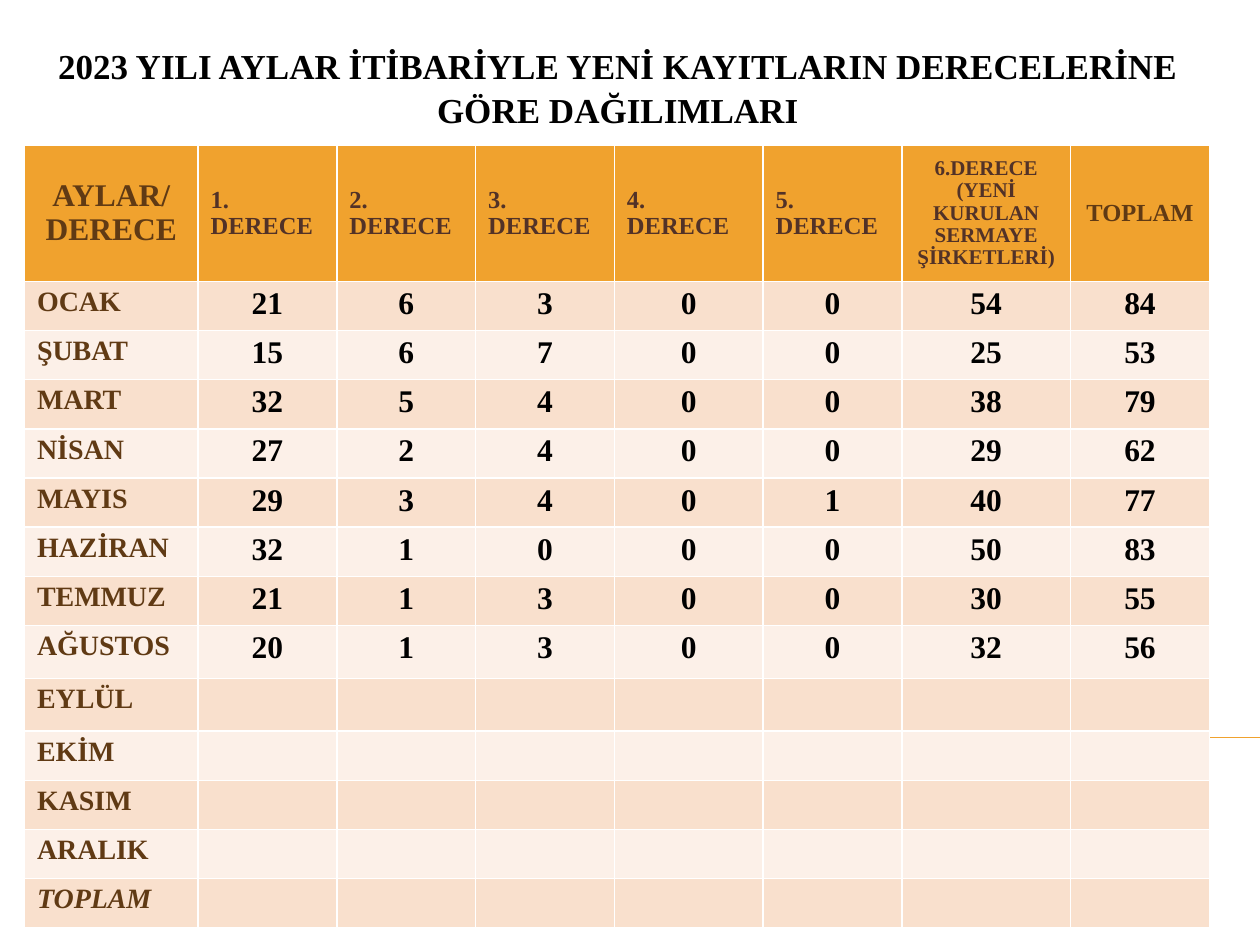
"""Builds the slide with the 2023 monthly table of new registrations by degree."""
from lxml.etree import SubElement
from pptx import Presentation
from pptx.dml.color import RGBColor
from pptx.enum.shapes import MSO_CONNECTOR
from pptx.enum.text import MSO_ANCHOR, MSO_AUTO_SIZE, PP_ALIGN
from pptx.oxml.ns import qn
from pptx.util import Pt

TITLE = "2023 YILI AYLAR İTİBARİYLE YENİ KAYITLARIN DERECELERİNE GÖRE DAĞILIMLARI"
HEADERS = ["AYLAR/ DERECE", "1. DERECE", "2. DERECE", "3. DERECE", "4. DERECE",
           "5. DERECE", "6.DERECE (YENİ KURULAN SERMAYE ŞİRKETLERİ)", "TOPLAM"]
MONTHS = [
    ("OCAK", 21, 6, 3, 0, 0, 54, 84),
    ("ŞUBAT", 15, 6, 7, 0, 0, 25, 53),
    ("MART", 32, 5, 4, 0, 0, 38, 79),
    ("NİSAN", 27, 2, 4, 0, 0, 29, 62),
    ("MAYIS", 29, 3, 4, 0, 1, 40, 77),
    ("HAZİRAN", 32, 1, 0, 0, 0, 50, 83),
    ("TEMMUZ", 21, 1, 3, 0, 0, 30, 55),
    ("AĞUSTOS", 20, 1, 3, 0, 0, 32, 56),
    ("EYLÜL",), ("EKİM",), ("KASIM",), ("ARALIK",), ("TOPLAM",),
]
COL_WIDTHS = [99.2, 79.3, 79.3, 79.3, 85, 79.3, 96.5, 79.3]
ROW_HEIGHTS = [77.8] + [28.1] * 7 + [30.2] * 2 + [28.1] * 4
HEADER_SIZES = [18] + [14] * 5 + [12, 14]

FONT = "Times New Roman"
BLACK = RGBColor(0x00, 0x00, 0x00)
ORANGE = RGBColor(0xF0, 0xA2, 0x2E)
BROWN = RGBColor(0x60, 0x3A, 0x14)
DARK_BROWN = RGBColor(0x52, 0x32, 0x27)
BANDS = [RGBColor(0xFC, 0xF0, 0xE8), RGBColor(0xF9, 0xE0, 0xCD)]


def write(tf, text, size, color, align, spacing, italic=None):
    tf.text = text
    p = tf.paragraphs[0]
    p.alignment = align
    p.line_spacing = spacing
    font = p.runs[0].font
    font.name, font.size, font.bold, font.italic = FONT, Pt(size), True, italic
    font.color.rgb = color


def add_title(s):
    title = s.shapes.title
    title.left, title.top, title.width, title.height = Pt(20), Pt(21), Pt(666), Pt(45)
    tf = title.text_frame
    tf.word_wrap = True
    tf.auto_size = MSO_AUTO_SIZE.NONE
    tf.vertical_anchor = MSO_ANCHOR.TOP
    write(tf, TITLE, 20, BLACK, PP_ALIGN.CENTER, 1.04)


def add_rule(s):
    rule = s.shapes.add_connector(MSO_CONNECTOR.STRAIGHT, Pt(40), Pt(421.4), Pt(720), Pt(421.4))
    rule.line.color.rgb = ORANGE
    rule.line.width = Pt(0.75)
    SubElement(rule._element.spPr, qn("a:effectLst"))


def fill_header(table):
    for col, (text, size) in enumerate(zip(HEADERS, HEADER_SIZES)):
        cell = table.cell(0, col)
        cell.fill.solid()
        cell.fill.fore_color.rgb = ORANGE
        cell.vertical_anchor = MSO_ANCHOR.MIDDLE
        is_degree = 1 <= col <= 6
        align = PP_ALIGN.LEFT if 1 <= col <= 5 else PP_ALIGN.CENTER
        write(cell.text_frame, text, size, DARK_BROWN if is_degree else BROWN, align, 0.96)


def fill_months(table):
    for row, values in enumerate(MONTHS, start=1):
        for col in range(len(HEADERS)):
            cell = table.cell(row, col)
            cell.fill.solid()
            cell.fill.fore_color.rgb = BANDS[row % 2]
            if col >= len(values):
                cell.margin_top = cell.margin_bottom = 0
            elif col == 0:
                write(cell.text_frame, values[0], 16, BROWN, PP_ALIGN.LEFT, 0.96,
                      row == len(MONTHS))
            else:
                write(cell.text_frame, str(values[col]), 18, BLACK, PP_ALIGN.CENTER, 0.96)


def add_degree_table(s):
    frame = s.shapes.add_table(len(ROW_HEIGHTS), len(COL_WIDTHS), Pt(14), Pt(83),
                               Pt(sum(COL_WIDTHS)), Pt(sum(ROW_HEIGHTS)))
    table = frame.table
    for column, width in zip(table.columns, COL_WIDTHS):
        column.width = Pt(width)
    for row, height in zip(table.rows, ROW_HEIGHTS):
        row.height = Pt(height)
    fill_header(table)
    fill_months(table)


def main():
    prs = Presentation()
    prs.slide_width, prs.slide_height = Pt(720), Pt(540)
    s = prs.slides.add_slide(prs.slide_layouts[5])
    add_title(s)
    add_rule(s)
    add_degree_table(s)
    prs.save("out.pptx")


if __name__ == "__main__":
    main()
